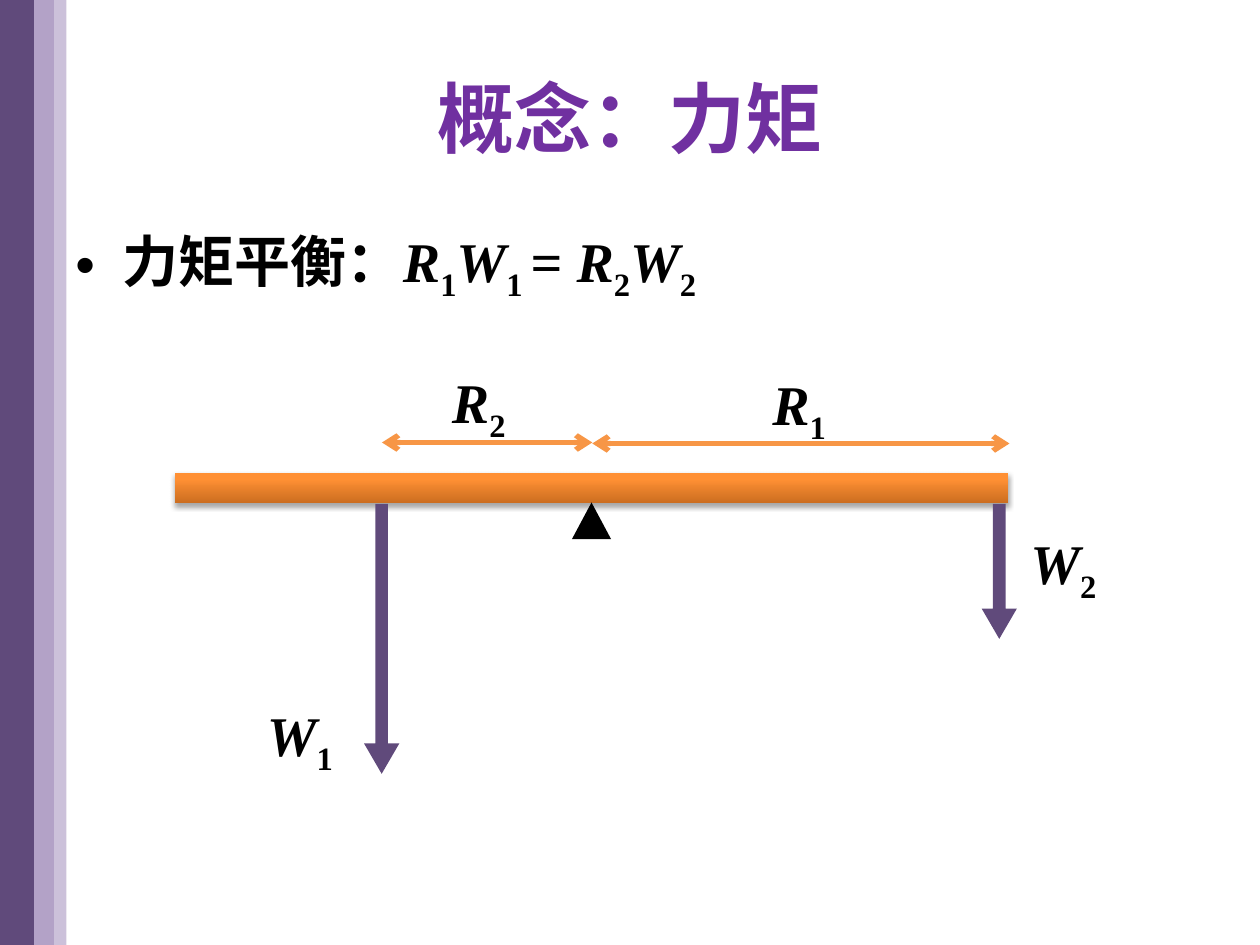
from dataclasses import dataclass

from lxml import etree
from pptx import Presentation
from pptx import util as u
from pptx.dml.color import RGBColor
from pptx.enum import shapes, text
from pptx.oxml import parse_xml
from pptx.oxml.ns import nsdecls, qn

COLORS = {
    "deep": "604A7B",
    "middle": "B3A2C7",
    "pale": "CCC1DA",
    "title": "7030A0",
    "text": "000000",
    "orange": "F79646",
}
CHINESE = "Noto Sans CJK SC"
LATIN = "Times New Roman"
BEAM_FILL = f"""<a:gradFill {nsdecls("a")} rotWithShape="1"><a:gsLst>
<a:gs pos="0"><a:srgbClr val="CC6E20"/></a:gs>
<a:gs pos="80000"><a:srgbClr val="FF9034"/></a:gs>
<a:gs pos="100000"><a:srgbClr val="FF9136"/></a:gs>
</a:gsLst><a:lin ang="16200000" scaled="0"/></a:gradFill>"""
BEAM_SHADOW = f"""<a:effectLst {nsdecls("a")}>
<a:outerShdw blurRad="39370" dist="22860" dir="5400000" rotWithShape="0">
<a:srgbClr val="000000"><a:alpha val="35000"/></a:srgbClr>
</a:outerShdw></a:effectLst>"""


@dataclass
class Stripe:
    left: float
    width: float
    color: str


@dataclass
class Force:
    left: float
    length: float


@dataclass
class Arm:
    start: float
    end: float
    top: float


@dataclass
class Label:
    letter: str
    index: str
    left: float
    top: float
    width: float


STRIPES = [Stripe(0, 0.7, "deep"), Stripe(0.69, 0.41, "middle"), Stripe(1.09, 0.25, "pale")]
FORCES = [Force(19.79, 2.72), Force(7.34, 5.44)]
ARMS = [Arm(7.7, 11.94, 8.92), Arm(11.94, 20.35, 8.94)]
LABELS = [
    Label("W", "1", 5.13, 14, 1.91),
    Label("W", "2", 20.52, 10.52, 1.91),
    Label("R", "2", 8.86, 7.29, 1.65),
    Label("R", "1", 15.32, 7.32, 1.65),
]


def color(name: str) -> RGBColor:
    return RGBColor.from_string(COLORS[name])


def add_span(para, words: str, size: int = 32, font: str = LATIN, ink: str = "text",
             italic: bool = False, subscript: bool = False) -> None:
    span = para.add_run()
    span.text = words
    span.font.size = u.Pt(size)
    span.font.bold = True
    span.font.italic = italic
    span.font.color.rgb = color(ink)
    span.font.name = font
    properties = span._r.get_or_add_rPr()
    etree.SubElement(properties, qn("a:ea")).set("typeface", font)
    if subscript:
        properties.set("baseline", "-25000")


def add_symbol(para, letter: str, index: str) -> None:
    add_span(para, letter, italic=True)
    add_span(para, index, subscript=True)


def add_block(page, kind, left: float, top: float, width: float, height: float, fill: str):
    block = page.shapes.add_shape(kind, u.Cm(left), u.Cm(top), u.Cm(width), u.Cm(height))
    block.shadow.inherit = False
    block.fill.solid()
    block.fill.fore_color.rgb = color(fill)
    block.line.fill.background()
    return block


def add_beam(page) -> None:
    beam = add_block(page, shapes.MSO_SHAPE.RECTANGLE, 3.53, 9.53, 16.79, 0.61, "orange")
    properties = beam._element.spPr
    for tag, markup in (("a:solidFill", BEAM_FILL), ("a:effectLst", BEAM_SHADOW)):
        properties.replace(properties.find(qn(tag)), parse_xml(markup))


def add_force(page, force: Force) -> None:
    arrow = add_block(page, shapes.MSO_SHAPE.DOWN_ARROW, force.left, 10.16, 0.71, force.length, "deep")
    arrow.adjustments[0] = 0.36
    arrow.adjustments[1] = 0.86


def add_arm(page, arm: Arm) -> None:
    line = page.shapes.add_connector(
        shapes.MSO_CONNECTOR.STRAIGHT, u.Cm(arm.start), u.Cm(arm.top), u.Cm(arm.end), u.Cm(arm.top))
    line.line.color.rgb = color("orange")
    line.line.width = u.Pt(3)
    outline = line.line._get_or_add_ln()
    for end in ("a:headEnd", "a:tailEnd"):
        etree.SubElement(outline, qn(end)).set("type", "arrow")
    etree.SubElement(line._element.spPr, qn("a:effectLst"))


def add_label(page, label: Label) -> None:
    box = page.shapes.add_textbox(u.Cm(label.left), u.Cm(label.top), u.Cm(label.width), u.Cm(1.63))
    box.text_frame.word_wrap = False
    box.text_frame.auto_size = text.MSO_AUTO_SIZE.SHAPE_TO_FIT_TEXT
    add_symbol(box.text_frame.paragraphs[0], label.letter, label.index)


def add_title(page) -> None:
    title = page.shapes.title
    title.left, title.top, title.width, title.height = u.Cm(1.27), u.Cm(0.76), u.Cm(22.86), u.Cm(3.18)
    title.text_frame.vertical_anchor = text.MSO_ANCHOR.MIDDLE
    para = title.text_frame.paragraphs[0]
    para.alignment = text.PP_ALIGN.CENTER
    add_span(para, "概念：力矩", 44, CHINESE, "title")


def add_equation(page) -> None:
    box = page.shapes.add_textbox(u.Cm(1.27), u.Cm(4.45), u.Cm(22.86), u.Cm(12.57))
    box.text_frame.word_wrap = True
    para = box.text_frame.paragraphs[0]
    properties = para._p.get_or_add_pPr()
    properties.set("marL", str(u.Cm(0.95)))
    properties.set("indent", str(u.Cm(-0.95)))
    etree.SubElement(properties, qn("a:buFont")).set("typeface", "Arial")
    etree.SubElement(properties, qn("a:buChar")).set("char", "•")
    add_span(para, "力矩平衡：", font=CHINESE)
    add_symbol(para, "R", "1")
    add_symbol(para, "W", "1 ")
    add_span(para, "= ")
    add_symbol(para, "R", "2")
    add_symbol(para, "W", "2")


def main() -> None:
    deck = Presentation()
    deck.slide_width, deck.slide_height = u.Cm(25.4), u.Cm(19.05)
    page = deck.slides.add_slide(deck.slide_layouts[5])
    for stripe in STRIPES:
        add_block(page, shapes.MSO_SHAPE.RECTANGLE, stripe.left, 0, stripe.width, 19.05, stripe.color)
    add_title(page)
    add_equation(page)
    add_beam(page)
    add_block(page, shapes.MSO_SHAPE.ISOSCELES_TRIANGLE, 11.53, 10.13, 0.79, 0.74, "text")
    for force in FORCES:
        add_force(page, force)
    for arm in ARMS:
        add_arm(page, arm)
    for label in LABELS:
        add_label(page, label)
    deck.save("out.pptx")


if __name__ == "__main__":
    main()
